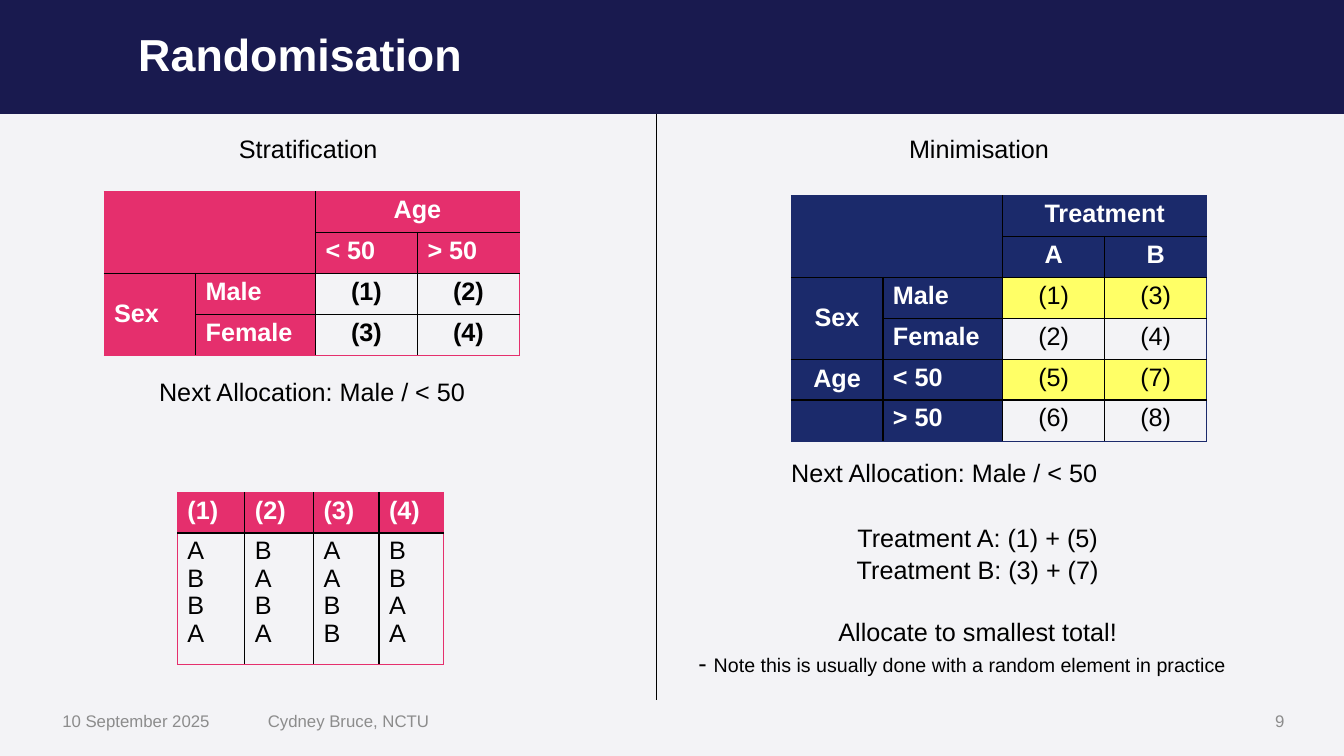
from lxml import etree
from pptx import Presentation
from pptx import util as u
from pptx.dml.color import RGBColor
from pptx.enum import shapes, text
from pptx.oxml.ns import qn

COLOURS = {
    "navy": "191A4F", "page": "F3F3F6", "pink": "E52F6D", "blue": "1B2A6B",
    "yellow": "FFFF66", "black": "000000", "white": "FFFFFF", "grey": "8C8C8C",
}
LEFT, CENTRE, RIGHT = (text.PP_ALIGN.LEFT, text.PP_ALIGN.CENTER, text.PP_ALIGN.RIGHT)
MIDDLE = text.MSO_ANCHOR.MIDDLE
WIDTH, HEIGHT = 33.87, 19.05
BANNER, DIVIDER, FOOTER = 2.87, 16.54, 17.65
LINE = 1.02
LABELS = ("Male", "Female", "< 50", "> 50")
GRID_COLUMNS = (2.31, 3.02, 2.57, 2.57)
GRID_ROW = 1.03
NEXT_ALLOCATION = "Next Allocation: Male / < 50"


def colour(name):
    return RGBColor.from_string(COLOURS[name])


def format_font(font, ink="black", **values):
    for key, value in {"name": "Arial", "size": u.Pt(18), "bold": False, **values}.items():
        setattr(font, key, value)
    font.color.rgb = colour(ink)


def add_text(slide, box, lines, align=LEFT, anchor=text.MSO_ANCHOR.TOP, **font):
    """Place a text box; box is left, top, width, height in centimetres."""
    frame = slide.shapes.add_textbox(*map(u.Cm, box)).text_frame
    frame.word_wrap = True
    frame.vertical_anchor = anchor
    frame.text = lines
    for paragraph in frame.paragraphs:
        paragraph.alignment = align
        for run in paragraph.runs:
            format_font(run.font, **font)
    return frame


def set_border(cell, side, name, points):
    border = etree.SubElement(cell._tc.get_or_add_tcPr(), qn("a:ln" + side), w=str(u.Pt(points)))
    fill = etree.SubElement(border, qn("a:solidFill"))
    etree.SubElement(fill, qn("a:srgbClr"), val=COLOURS[name])


def draw_borders(cell, row, column, size, accent):
    """Black rules inside the table, thin accent rules around its edge."""
    row_span = cell.span_height if cell.is_merge_origin else 1
    column_span = cell.span_width if cell.is_merge_origin else 1
    outer = {
        "L": column == 0, "R": column + column_span == size[1],
        "T": row == 0, "B": row + row_span == size[0],
    }
    for side, is_outer in outer.items():
        set_border(cell, side, *((accent, 0.5) if is_outer else ("black", 1)))


def add_grid(slide, origin, entries, columns, rows, accent, heads,
             left=(), merges=(), highlighted=(), bold=False):
    """Build a table; heads counts its header rows and header columns."""
    size = len(rows), len(columns)
    table = slide.shapes.add_table(
        *size, *map(u.Cm, (*origin, sum(columns), sum(rows)))).table
    table.first_row = table.horz_banding = False
    for index, width in enumerate(columns):
        table.columns[index].width = u.Cm(width)
    for index, height in enumerate(rows):
        table.rows[index].height = u.Cm(height)
    for top, start, bottom, end in merges:
        table.cell(top, start).merge(table.cell(bottom, end))

    for row, line in enumerate(entries):
        for column, entry in enumerate(line):
            cell = table.cell(row, column)
            if cell.is_spanned:
                continue
            is_head = row < heads[0] or column < heads[1]
            draw_borders(cell, row, column, size, accent)
            if is_head or row in highlighted:
                cell.fill.solid()
                cell.fill.fore_color.rgb = colour(accent if is_head else "yellow")
            else:
                cell.fill.background()
            if column < heads[1] - 1:
                cell.vertical_anchor = MIDDLE
            cell.text_frame.text = entry
            for paragraph in cell.text_frame.paragraphs:
                paragraph.alignment = LEFT if entry in left else CENTRE
                paragraph.line_spacing = 0.97
                format_font(paragraph.font, "white" if is_head else "black", bold=is_head or bold)
                for run in paragraph.runs:
                    format_font(run.font, "white" if is_head else "black", bold=is_head or bold)


def add_banner(slide, box):
    banner = slide.shapes.add_shape(shapes.MSO_SHAPE.RECTANGLE, *map(u.Cm, box))
    banner.shadow.inherit = False
    banner.fill.solid()
    banner.fill.fore_color.rgb = colour("navy")
    banner.line.fill.background()
    slide.shapes._spTree.insert(2, banner._element)  # behind the title

    title = slide.shapes.title
    place = {"left": 3.23, "top": box[1], "width": 29.39, "height": box[3]}
    for key, value in place.items():
        setattr(title, key, u.Cm(value))
    title.text_frame.text = "Randomisation"
    title.text_frame.vertical_anchor = MIDDLE
    heading = title.text_frame.paragraphs[0]
    heading.alignment = LEFT
    heading.line_spacing = 0.9
    format_font(heading.runs[0].font, "white", size=u.Pt(32), bold=True)


def add_divider(slide, x, top, bottom):
    divider = slide.shapes.add_connector(
        shapes.MSO_CONNECTOR.STRAIGHT, *map(u.Cm, (x, top, x, bottom)))
    divider.line.color.rgb = colour("black")
    divider.line.width = u.Pt(0.5)
    etree.SubElement(divider._element.spPr, qn("a:effectLst"))


def add_stratification(slide, x, y):
    add_text(slide, (x + 5.77, y + 0.36, 4.22, LINE), "Stratification")
    strata = [
        ("", "", "Age", ""),
        ("", "", "< 50", "> 50"),
        ("Sex", "Male", "(1)", "(2)"),
        ("", "Female", "(3)", "(4)"),
    ]
    add_grid(slide, (x + 2.62, y + 1.96), strata, GRID_COLUMNS, [GRID_ROW] * 4, "pink", (2, 2),
             left=(*LABELS, "Sex"), bold=True,
             merges=[(0, 0, 1, 1), (0, 2, 0, 3), (2, 0, 3, 0)])
    add_text(slide, (x + 3.76, y + 6.5, 8.38, LINE), NEXT_ALLOCATION)
    headers = ("(1)", "(2)", "(3)", "(4)")
    sequences = tuple("\n".join(block) for block in ("ABBA", "BABA", "AABB", "BBAA"))
    add_grid(slide, (x + 4.47, y + 9.53), [headers, sequences], (1.7, 1.73, 1.65, 1.63),
             (GRID_ROW, 3.3), "pink", (1, 0), left=headers + sequences)


def add_minimisation(slide, x, y):
    add_text(slide, (x + 6.12, y + 0.36, 5.49, LINE), "Minimisation")
    factors = [
        ("", "", "Treatment", ""),
        ("", "", "A", "B"),
        ("Sex", "Male", "(1)", "(3)"),
        ("", "Female", "(2)", "(4)"),
        ("Age", "< 50", "(5)", "(7)"),
        ("", "> 50", "(6)", "(8)"),
    ]
    add_grid(slide, (x + 3.4, y + 2.06), factors, GRID_COLUMNS, [GRID_ROW] * 6, "blue", (2, 2),
             left=LABELS, highlighted=(2, 4),
             merges=[(0, 0, 1, 1), (0, 2, 0, 3), (2, 0, 3, 0)])
    add_text(slide, (x + 3.15, y + 8.53, 8.38, LINE), NEXT_ALLOCATION)

    steps = add_text(
        slide, (x + 0.81, y + 10.13, 14.58, 4.11),
        "Treatment A: (1) + (5)\nTreatment B: (3) + (7)\nAllocate to smallest total!\n- ", CENTRE)
    for step in steps.paragraphs:
        step.line_spacing = 1.05
    allocate, note = steps.paragraphs[2:]
    allocate.space_before = u.Pt(21.5)
    note.alignment = LEFT
    remark = note.add_run()
    remark.text = "Note this is usually done with a random element in practice"
    format_font(remark.font, size=u.Pt(14))


def add_footer(slide, y):
    for x, width, words, align in (
        (1.32, 4.47, "10 September 2025", LEFT),
        (6.5, 9.63, "Cydney Bruce, NCTU", LEFT),
        (24.54, 8.08, "9", RIGHT),
    ):
        add_text(slide, (x, y, width, LINE), words, align, MIDDLE, ink="grey", size=u.Pt(12))


def main():
    deck = Presentation()
    deck.slide_width, deck.slide_height = u.Cm(WIDTH), u.Cm(HEIGHT)
    slide = deck.slides.add_slide(deck.slide_layouts[5])
    slide.background.fill.solid()
    slide.background.fill.fore_color.rgb = colour("page")
    add_banner(slide, (0, 0, WIDTH, BANNER))
    add_divider(slide, DIVIDER, BANNER, FOOTER)
    add_stratification(slide, 0, BANNER)
    add_minimisation(slide, DIVIDER, BANNER)
    add_footer(slide, FOOTER)
    deck.save("out.pptx")


if __name__ == "__main__":
    main()
